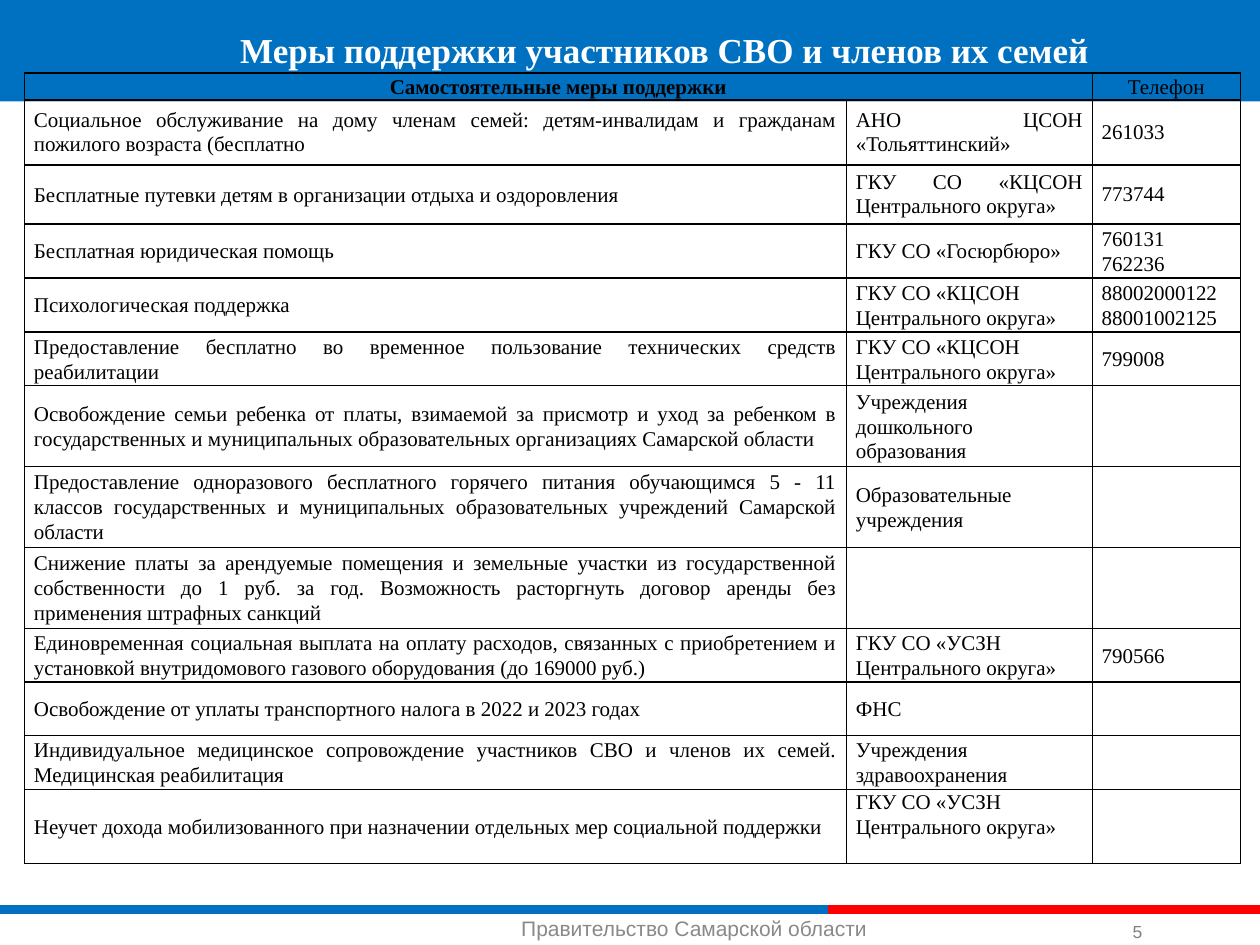
from lxml import etree
from pptx import Presentation
from pptx.dml.color import RGBColor
from pptx.enum.shapes import MSO_CONNECTOR, MSO_SHAPE
from pptx.enum.text import MSO_ANCHOR, PP_ALIGN
from pptx.oxml.ns import qn
from pptx.util import Pt

LEFT, CENTER, JUSTIFY = PP_ALIGN.LEFT, PP_ALIGN.CENTER, PP_ALIGN.JUSTIFY
TOP, MIDDLE, BOTTOM = MSO_ANCHOR.TOP, MSO_ANCHOR.MIDDLE, MSO_ANCHOR.BOTTOM
RECTANGLE, STRAIGHT = MSO_SHAPE.RECTANGLE, MSO_CONNECTOR.STRAIGHT
BLUE, RED, BLACK, WHITE = "0070C1", "FF0000", "000000", "FFFFFF"
SERIF, SANS = "Times New Roman", "Arial"
WIDTH, HEIGHT = 720, 540

COLUMN_WIDTHS = [469.7, 140.5, 84.6]
ROW_HEIGHTS = [15.4, 37.1, 33.7, 30.5, 30.5, 30.5, 42.5, 46, 42.8, 30.5, 30.5, 30.7, 42.4]
HEADERS = ["Самостоятельные меры поддержки", "", "Телефон"]
SOCIAL_CENTRE = "ГКУ СО «КЦСОН Центрального округа»"
SOCIAL_OFFICE = "ГКУ СО «УСЗН Центрального округа»"
MEASURES = [
    ("Социальное обслуживание на дому членам семей: детям-инвалидам и гражданам "
     "пожилого возраста (бесплатно", "АНО ЦСОН «Тольяттинский»", "261033"),
    ("Бесплатные путевки детям в организации отдыха и оздоровления",
     SOCIAL_CENTRE, "773744"),
    ("Бесплатная юридическая помощь", "ГКУ СО «Госюрбюро»", "760131\n762236"),
    ("Психологическая поддержка", SOCIAL_CENTRE, "88002000122\n88001002125"),
    ("Предоставление бесплатно во временное пользование технических средств "
     "реабилитации", SOCIAL_CENTRE, "799008"),
    ("Освобождение семьи ребенка от платы, взимаемой за присмотр и уход за ребенком "
     "в государственных и муниципальных образовательных организациях Самарской "
     "области", "Учреждения дошкольного образования", ""),
    ("Предоставление одноразового бесплатного горячего питания обучающимся 5 - 11 "
     "классов государственных и муниципальных образовательных учреждений Самарской "
     "области", "Образовательные учреждения", ""),
    ("Снижение платы за арендуемые помещения и земельные участки из государственной "
     "собственности до 1 руб. за год. Возможность расторгнуть договор аренды без "
     "применения штрафных санкций", "", ""),
    ("Единовременная социальная выплата на оплату расходов, связанных с приобретением "
     "и установкой внутридомового газового оборудования (до 169000 руб.)",
     SOCIAL_OFFICE, "790566"),
    ("Освобождение от уплаты транспортного налога в 2022 и 2023 годах", "ФНС", ""),
    ("Индивидуальное медицинское сопровождение участников СВО и членов их семей. "
     "Медицинская реабилитация", "Учреждения здравоохранения", ""),
    ("Неучет дохода мобилизованного при назначении отдельных мер социальной "
     "поддержки", SOCIAL_OFFICE, ""),
]


def color(value):
    return RGBColor.from_string(value)


def set_attributes(target, values):
    for name, value in values.items():
        setattr(target, name, value)


def write_text(frame, text, size, font, ink, bold=False, align=LEFT, spacing=1.0):
    """Fill the frame with one paragraph for each line of the text."""
    frame.text = text
    for paragraph in frame.paragraphs:
        set_attributes(paragraph, {"alignment": align, "line_spacing": spacing})
        set_attributes(paragraph.font, {"size": Pt(size), "name": font, "bold": bold})
        paragraph.font.color.rgb = color(ink)


def add_text(slide, box, text, anchor=TOP, wrap=True, **text_format):
    frame = slide.shapes.add_textbox(*map(Pt, box)).text_frame
    sides = ("left", "top", "right", "bottom")
    set_attributes(frame, {f"margin_{side}": Pt(3.6) for side in sides})
    set_attributes(frame, {"vertical_anchor": anchor, "word_wrap": wrap})
    write_text(frame, text, **text_format)


def add_header(slide, box):
    left, top, width, height = box
    band = slide.shapes.add_shape(RECTANGLE, *map(Pt, box))
    band.shadow.inherit = False
    band.fill.solid()
    band.fill.fore_color.rgb = color(BLUE)
    band.line.fill.background()
    add_text(slide, (left + 93.6, top, 572.4, height),
             "Меры поддержки участников СВО и членов их семей", anchor=MIDDLE,
             size=20, font=SERIF, ink=WHITE, bold=True, align=CENTER)


def add_rule(slide, start, end, top, ink):
    rule = slide.shapes.add_connector(STRAIGHT, Pt(start), Pt(top), Pt(end), Pt(top))
    rule.line.width = Pt(5)
    rule.line.color.rgb = color(ink)
    etree.SubElement(rule._element.spPr, qn("a:effectLst"))


def add_footer(slide, box):
    left, top, width, height = box
    split = left + 473
    add_rule(slide, left, split, top, BLUE)
    add_rule(slide, split, left + width, top, RED)
    add_text(slide, (left + 161.3, top, 470.9, height), "Правительство Самарской области",
             size=12, font=SANS, ink="898989", align=CENTER)
    add_text(slide, (left + 643.7, top + 2.9, 19.4, 19.4), "5", anchor=BOTTOM,
             wrap=False, size=10, font=SANS, ink="808080")


def add_borders(cell):
    properties = cell._tc.get_or_add_tcPr()
    for side in ("lnL", "lnR", "lnT", "lnB"):
        line = etree.SubElement(properties, qn(f"a:{side}"), w=str(Pt(1)))
        fill = etree.SubElement(line, qn("a:solidFill"))
        etree.SubElement(fill, qn("a:srgbClr"), val=BLACK)


def format_cell(cell, text, anchor, **text_format):
    set_attributes(cell, {"margin_left": Pt(5.4), "margin_right": Pt(5.4),
                          "margin_top": 0, "margin_bottom": 0,
                          "vertical_anchor": anchor})
    add_borders(cell)
    cell.fill.background()
    write_text(cell.text_frame, text, 12, SERIF, BLACK, **text_format)


def add_measures_table(slide, left, top):
    rows = [HEADERS, *MEASURES]
    box = (left, top, sum(COLUMN_WIDTHS), sum(ROW_HEIGHTS))
    table = slide.shapes.add_table(len(rows), len(HEADERS), *map(Pt, box)).table
    set_attributes(table, {"first_row": False, "horz_banding": False})
    for column, width in zip(table.columns, COLUMN_WIDTHS):
        column.width = Pt(width)
    for row, height in zip(table.rows, ROW_HEIGHTS):
        row.height = Pt(height)
    table.cell(0, 0).merge(table.cell(0, 1))

    for i, texts in enumerate(rows):
        for j, text in enumerate(texts):
            header = i == 0
            justified = j == 0 or i in (1, 2)
            single_spaced = i == 1 or (i == 2 and j > 0)
            align = CENTER if header else JUSTIFY if justified else LEFT
            anchor = TOP if i == len(rows) - 1 and j == 1 else MIDDLE
            format_cell(table.cell(i, j), text, anchor, bold=header and j == 0,
                        align=align, spacing=1.0 if single_spaced else 1.07)


def main():
    presentation = Presentation()
    set_attributes(presentation, {"slide_width": Pt(WIDTH), "slide_height": Pt(HEIGHT)})
    slide = presentation.slides.add_slide(presentation.slide_layouts[6])
    add_header(slide, (0, -2, WIDTH, 60))
    add_measures_table(slide, 14, 41.8)
    add_footer(slide, (0, 519.6, WIDTH, 20.4))
    presentation.save("out.pptx")


if __name__ == "__main__":
    main()
